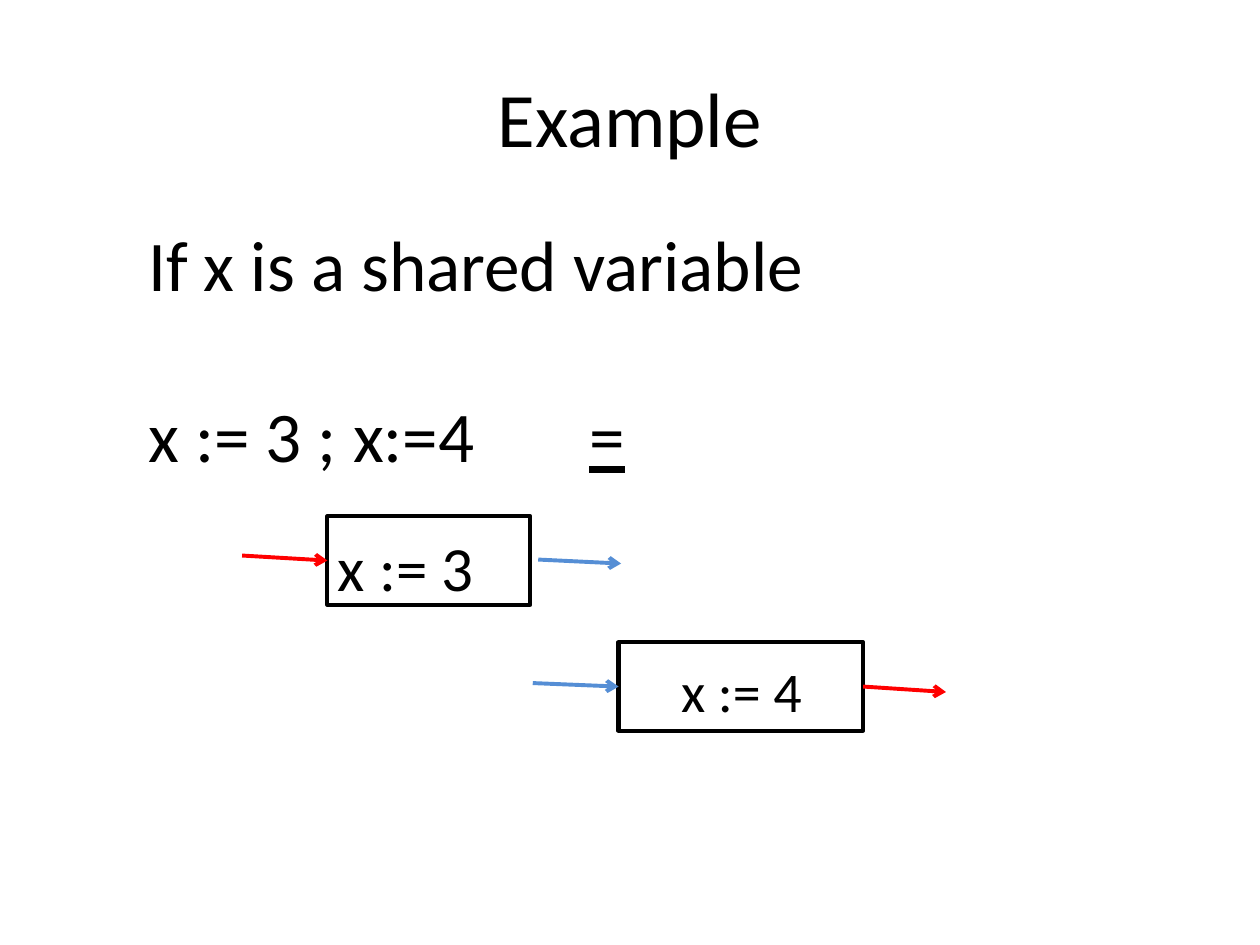
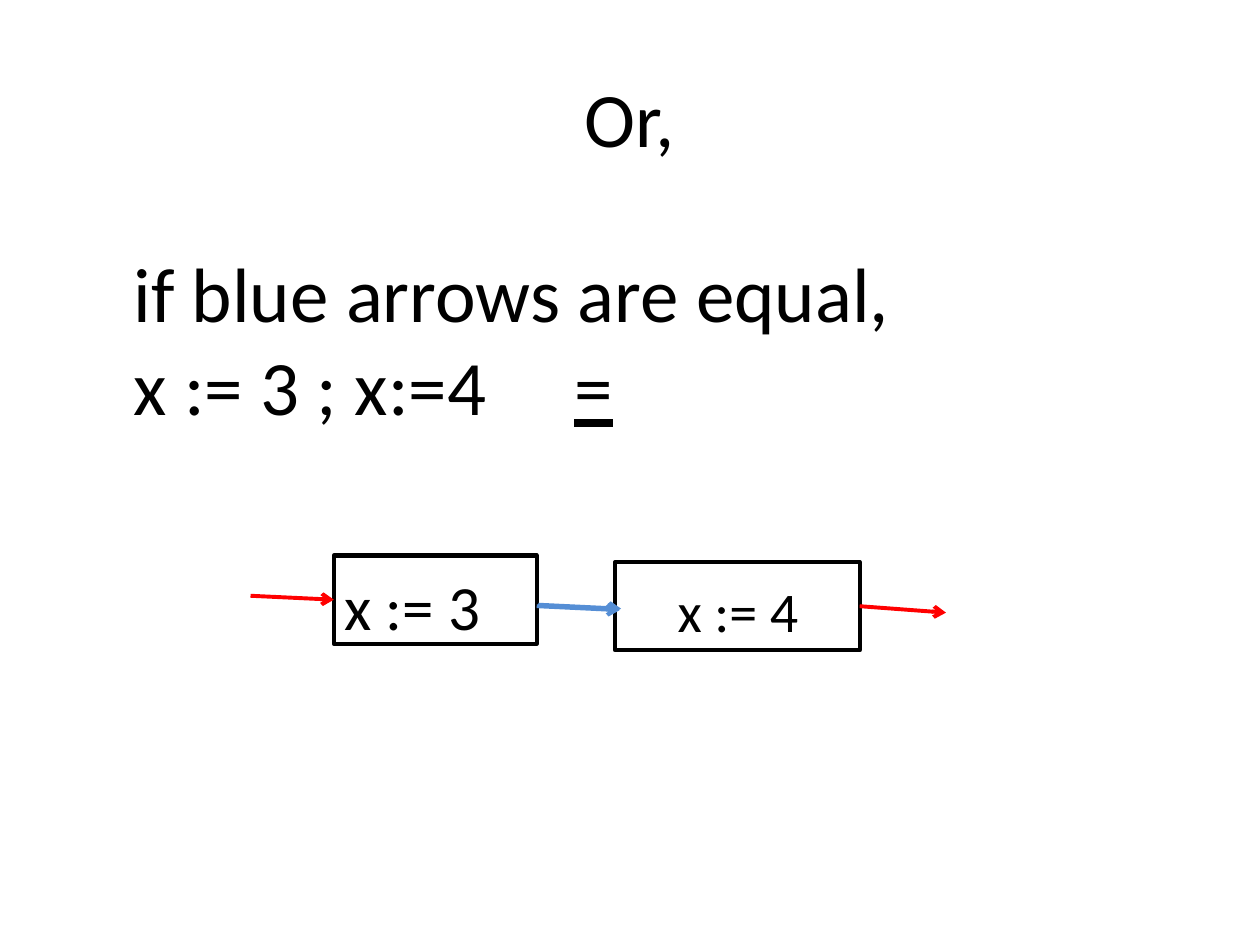
from dataclasses import dataclass

from lxml.etree import SubElement
from pptx import Presentation
from pptx.dml.color import RGBColor
from pptx.enum.shapes import MSO_CONNECTOR as Connector, MSO_SHAPE as Shape
from pptx.enum.text import MSO_ANCHOR as Anchor, PP_ALIGN as Align
from pptx.oxml.ns import qn
from pptx.util import Cm, Pt


@dataclass(frozen=True)
class Theme:
    font: str = "Calibri"
    black: RGBColor = RGBColor(0x00, 0x00, 0x00)
    red: RGBColor = RGBColor(0xFF, 0x00, 0x00)
    blue: RGBColor = RGBColor(0x55, 0x8E, 0xD5)
    title_size: float = 44
    box_line: float = 2.36
    arrow_line: float = 2.25


THEME = Theme()
LEFT_SIDE, RIGHT_SIDE = 1, 3
ARROW_RUN, ARROW_RISE = 1.67, 0.08
BOX_HEIGHT = 1.78

STEPS = {
    "three": dict(text="x := 3", width=4.09, size=36, wrap=True,
                  offset=(-0.04, 0.11), label=(3.96, 1.8)),
    "four": dict(text="x := 4", width=4.93, size=32, wrap=False,
                 offset=(1.01, 0.17), label=(2.97, 1.63)),
}
EQUATION = [("x := 3 ; x:=4\t\t", False), ("=", True)]

SLIDES = [
    dict(
        title="Example",
        statement=dict(lines=[[("If x is a shared variable", False)], EQUATION],
                       area=(2.74, 4.52, 20.85, 5.0), size=40.7, gap=49),
        boxes={"three": (6.6, 10.41), "four": (12.47, 12.95)},
        arrows=[
            dict(color=THEME.red, start=(4.88, 11.2), into="three"),
            dict(color=THEME.blue, start=(10.74, 13.77), into="four"),
            dict(color=THEME.red, start=(17.4, 13.87), out_of="four"),
            dict(color=THEME.blue, start=(10.85, 11.28)),
        ],
    ),
    dict(
        title="Or,",
        statement=dict(lines=[[("if blue arrows are equal,", False)], EQUATION],
                       area=(2.44, 4.52, 21.23, 4.6), size=44, gap=0),
        boxes={"three": (6.73, 11.2), "four": (12.4, 11.33)},
        arrows=[
            dict(color=THEME.red, start=(5.05, 12.01), into="three"),
            dict(color=THEME.blue, start=(10.85, 12.19)),
            dict(color=THEME.red, start=(17.4, 12.27), out_of="four"),
            dict(color=THEME.blue, start=(10.82, 12.22)),
        ],
    ),
]


def cms(*lengths):
    return [Cm(length) for length in lengths]


def add_run(paragraph, text, size, underline=False):
    run = paragraph.add_run()
    run.text = text
    run.font.name = THEME.font
    run.font.size = Pt(size)
    run.font.color.rgb = THEME.black
    if underline:
        run.font.underline = True


def add_title(slide, text):
    title = slide.shapes.title
    title.left, title.top, title.width, title.height = cms(1.27, 0.76, 22.86, 3.18)
    title.text_frame.vertical_anchor = Anchor.MIDDLE
    paragraph = title.text_frame.paragraphs[0]
    paragraph.alignment = Align.CENTER
    add_run(paragraph, text, THEME.title_size)


def add_statement(slide, lines, area, size, gap):
    frame = slide.shapes.add_textbox(*cms(*area)).text_frame
    frame.word_wrap = True
    frame.vertical_anchor = Anchor.MIDDLE
    for index, line in enumerate(lines):
        paragraph = frame.add_paragraph() if index else frame.paragraphs[0]
        paragraph.space_before = Pt(gap if index else 0)
        for text, underline in line:
            add_run(paragraph, text, size, underline)


def add_step(slide, step, left, top):
    box = slide.shapes.add_shape(Shape.RECTANGLE, *cms(left, top, step["width"], BOX_HEIGHT))
    box.shadow.inherit = False
    box.fill.background()
    box.line.color.rgb = THEME.black
    box.line.width = Pt(THEME.box_line)
    shift_x, shift_y = step["offset"]
    label = slide.shapes.add_textbox(*cms(left + shift_x, top + shift_y, *step["label"]))
    label.text_frame.word_wrap = step["wrap"]
    add_run(label.text_frame.paragraphs[0], step["text"], step["size"])
    return box


def add_arrow(slide, boxes, color, start, into=None, out_of=None):
    x, y = start
    arrow = slide.shapes.add_connector(
        Connector.STRAIGHT, *cms(x, y, x + ARROW_RUN, y + ARROW_RISE))
    arrow.line.color.rgb = color
    arrow.line.width = Pt(THEME.arrow_line)
    SubElement(arrow.line._get_or_add_ln(), qn("a:tailEnd"), type="arrow")
    SubElement(arrow._element.spPr, qn("a:effectLst"))
    if into:
        arrow.end_connect(boxes[into], LEFT_SIDE)
    if out_of:
        arrow.begin_connect(boxes[out_of], RIGHT_SIDE)


def main():
    presentation = Presentation()
    presentation.slide_width, presentation.slide_height = cms(25.4, 19.05)
    title_only = presentation.slide_layouts[5]
    for content in SLIDES:
        slide = presentation.slides.add_slide(title_only)
        add_title(slide, content["title"])
        boxes = {name: add_step(slide, STEPS[name], *corner)
                 for name, corner in content["boxes"].items()}
        for arrow in content["arrows"]:
            add_arrow(slide, boxes, **arrow)
        add_statement(slide, **content["statement"])
    presentation.save("out.pptx")


if __name__ == "__main__":
    main()
